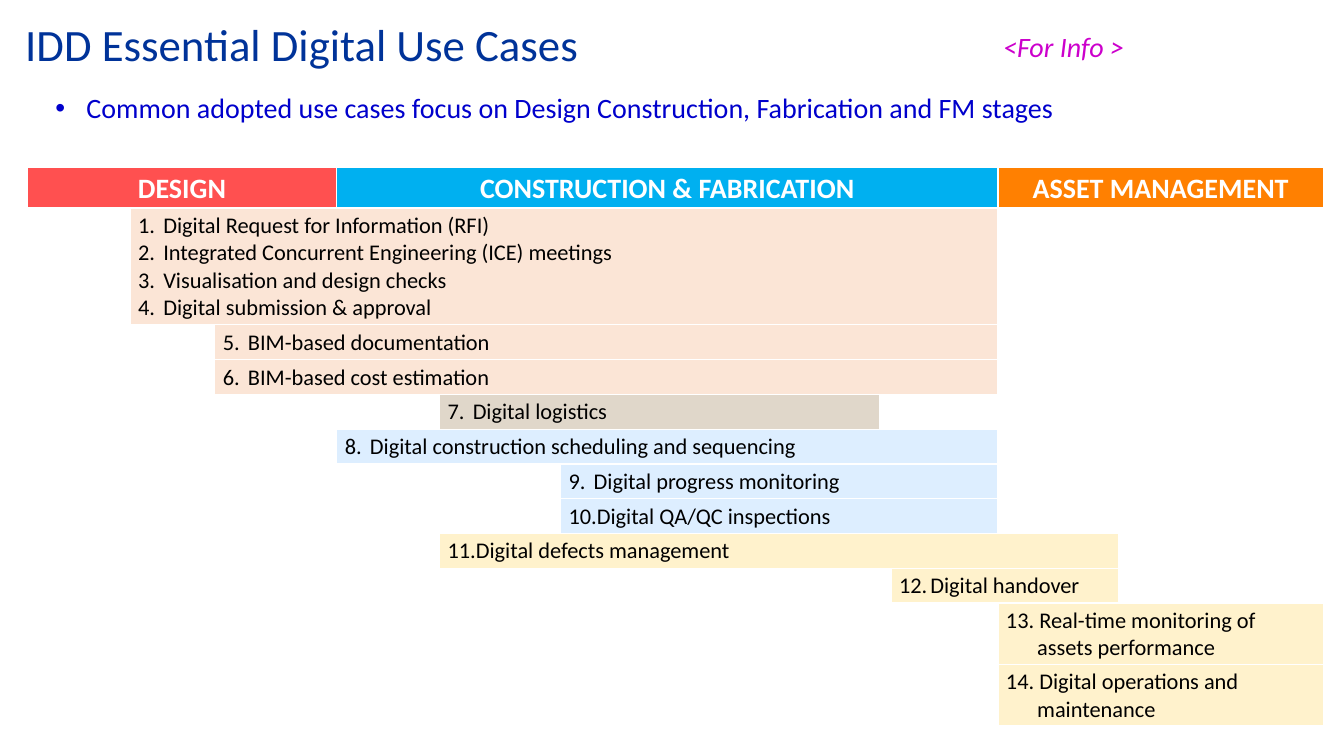
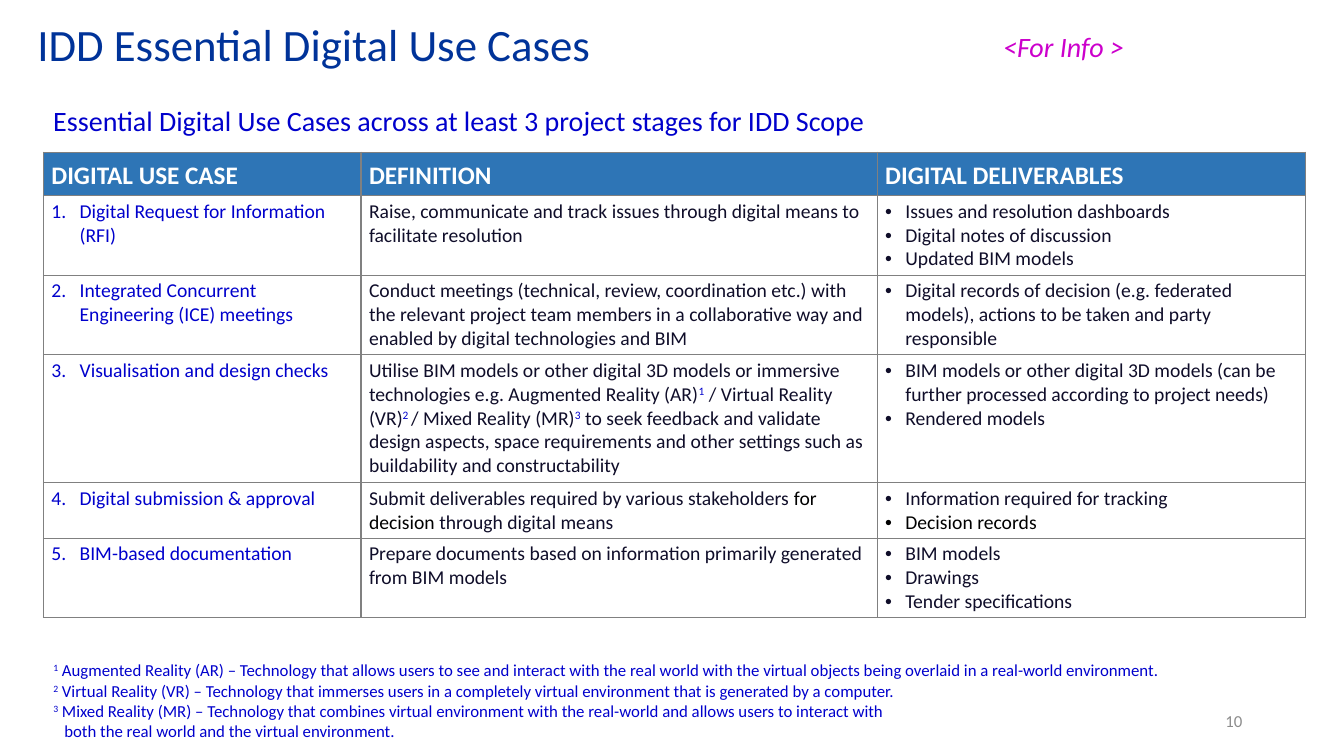
"""Build two slides on essential digital use cases."""
from lxml.etree import SubElement
from pptx import Presentation
from pptx.dml.color import RGBColor
from pptx.enum.text import MSO_ANCHOR, MSO_AUTO_SIZE, PP_ALIGN
from pptx.oxml import parse_xml
from pptx.oxml.ns import nsdecls, qn
from pptx.util import Inches, Pt

COLOURS = {
    "title": "003399", "blue": "0000CC", "info": "CC00CC", "number": "8C8C8C",
    "white": "FFFFFF", "black": "000000", "ink": "0F0D29", "grid": "808080",
    "design": "FF5050", "construction": "00B0F0", "asset": "FF8001",
    "peach": "FBE5D6", "taupe": "E0D7CA", "ice": "DDEEFF", "cream": "FFF2CC",
    "header": "2E75B6",
}
STYLES = {
    "title": {"size": Pt(32), "color": "title"},
    "lead": {"size": Pt(20), "color": "blue"},
    "info": {"size": Pt(20), "color": "info", "italic": True},
    "footnote": {"size": Pt(12), "color": "blue"},
    "number": {"size": Pt(12), "color": "number"},
    "stage": {"size": Pt(20), "color": "white", "bold": True},
    "use": {"size": Pt(16), "color": "black"},
    "header": {"size": Pt(18), "color": "white", "bold": True},
    "case": {"size": Pt(14), "color": "blue"},
    "body": {"size": Pt(14), "color": "ink"},
}
MARGINS = {"margin_left": Inches(0.08), "margin_right": Inches(0.08),
           "margin_top": Inches(0.04), "margin_bottom": Inches(0.03)}
BARE = dict.fromkeys(MARGINS, 0)


def assign(target, values):
    for name, value in values.items():
        setattr(target, name, value)


def rgb(colour):
    return RGBColor.from_string(COLOURS[colour])


class Deck:
    def __init__(self):
        self.presentation = Presentation()
        assign(self.presentation, {"slide_width": Inches(13.33), "slide_height": Inches(7.5)})
        self.slide = None

    def add_slide(self, heading, left, width):
        self.slide = self.presentation.slides.add_slide(self.presentation.slide_layouts[5])
        title = self.slide.shapes.title
        assign(title, {"left": Inches(left), "top": Inches(0.07),
                       "width": Inches(width), "height": Inches(0.79)})
        assign(title.text_frame, {"vertical_anchor": MSO_ANCHOR.MIDDLE, "word_wrap": True,
                                  "auto_size": MSO_AUTO_SIZE.NONE})
        self.paragraphs(title.text_frame, [heading], "title",
                        layout={"alignment": PP_ALIGN.LEFT, "line_spacing": 0.9})
        self.text(9.85, 0.24, 1.41, 0.44, ["<For Info >"], "info", wrap=False)

    def paragraphs(self, frame, contents, style, marker=None, start=1, indent=0, layout=None):
        for index, content in enumerate(contents):
            paragraph = frame.add_paragraph() if index else frame.paragraphs[0]
            assign(paragraph, layout or {})
            properties = paragraph._p.get_or_add_pPr()
            if indent:
                properties.set("marL", str(Inches(indent)))
                properties.set("indent", str(-Inches(indent)))
            if marker == "number":
                SubElement(properties, qn("a:buAutoNum"), type="arabicPeriod", startAt=str(start))
            elif marker:
                SubElement(properties, qn("a:buFont"), typeface="Arial")
                SubElement(properties, qn("a:buChar"), char=marker)
            for piece in [content] if isinstance(content, str) else content:
                self.run(paragraph, piece, style)

    def run(self, paragraph, piece, style):
        wording, changes = (piece, {}) if isinstance(piece, str) else piece
        values = {"name": "Calibri", **STYLES[style], **changes}
        run = paragraph.add_run()
        run.text = wording
        run.font.color.rgb = rgb(values.pop("color"))
        if values.pop("raised", False):
            run._r.get_or_add_rPr().set("baseline", "30000")
        assign(run.font, values)

    def text(self, left, top, width, height, contents, style, wrap=True, anchor=MSO_ANCHOR.TOP, **form):
        box = self.slide.shapes.add_textbox(Inches(left), Inches(top), Inches(width), Inches(height))
        assign(box.text_frame, {"word_wrap": wrap, "vertical_anchor": anchor})
        self.paragraphs(box.text_frame, contents, style, **form)
        return box.text_frame

    def table(self, left, top, widths, heights, border):
        frame = self.slide.shapes.add_table(
            len(heights), len(widths), Inches(left), Inches(top),
            Inches(sum(widths)), Inches(sum(heights)))
        table = frame.table
        assign(table, {"first_row": False, "horz_banding": False})
        for column, width in zip(table.columns, widths):
            column.width = Inches(width)
        for row, height in zip(table.rows, heights):
            row.height = Inches(height)
        for cell in table.iter_cells():
            assign(cell, BARE)
            cell.fill.background()
            for position, side in enumerate("LRTB"):
                cell._tc.tcPr.insert(position, parse_xml(
                    f'<a:ln{side} {nsdecls("a")} w="12700"><a:solidFill>'
                    f'<a:srgbClr val="{COLOURS[border]}"/></a:solidFill></a:ln{side}>'))
        return table

    def cell(self, table, row, column, contents, style, fill, span=1, **form):
        cell = table.cell(row, column)
        if span > 1:
            cell.merge(table.cell(row, column + span - 1))
        assign(cell, MARGINS)
        cell.fill.solid()
        cell.fill.fore_color.rgb = rgb(fill)
        self.paragraphs(cell.text_frame, contents, style, **form)


STAGES = [(0, 3, "DESIGN", "design"), (3, 8, "CONSTRUCTION & FABRICATION", "construction"),
          (11, 3, "ASSET MANAGEMENT", "asset")]
NUMBERED_USES = [
    (1, 10, "peach", 1, ["Digital Request for Information (RFI)",
                         "Integrated Concurrent Engineering (ICE) meetings",
                         "Visualisation and design checks",
                         "Digital submission & approval"]),
    (2, 9, "peach", 5, ["BIM-based documentation"]),
    (2, 9, "peach", 6, ["BIM-based cost estimation"]),
    (4, 5, "taupe", 7, ["Digital logistics"]),
    (3, 8, "ice", 8, ["Digital construction scheduling and sequencing"]),
    (6, 5, "ice", 9, ["Digital progress monitoring"]),
    (6, 5, "ice", 10, ["Digital QA/QC inspections"]),
    (4, 8, "cream", 11, ["Digital defects management"]),
]
LATE_USES = [(10, 2, "12.\tDigital handover"),
             (11, 3, "13. Real-time monitoring of assets performance"),
             (11, 3, "14. Digital operations and maintenance")]
RAISED = {"color": "blue", "raised": True}
BLACK = {"color": "black"}
HEADERS = ["DIGITAL USE CASE", "DEFINITION", "DIGITAL DELIVERABLES"]
DEFINITIONS = [
    ("Digital Request for Information (RFI)",
     "Raise, communicate and track issues through digital means to facilitate resolution",
     ["Issues and resolution dashboards", "Digital notes of discussion", "Updated BIM models"]),
    ("Integrated Concurrent Engineering (ICE) meetings",
     "Conduct meetings (technical, review, coordination etc.) with the relevant project team "
     "members in a collaborative way and enabled by digital technologies and BIM",
     ["Digital records of decision (e.g. federated models), actions to be taken and party responsible"]),
    ("Visualisation and design checks",
     ["Utilise BIM models or other digital 3D models or immersive technologies e.g. "
      "Augmented Reality (AR)", ("1", RAISED), " / Virtual Reality (VR)", ("2 ", RAISED),
      "/ Mixed Reality (MR)", ("3", RAISED),
      " to seek feedback and validate design aspects, space requirements and other settings "
      "such as buildability and constructability"],
     ["BIM models or other digital 3D models (can be further processed according to project needs)",
      "Rendered models"]),
    ("Digital submission & approval",
     ["Submit deliverables required by various stakeholders ", ("for decision ", BLACK),
      "through digital means"],
     ["Information required for tracking", [("Decision records", BLACK)]]),
    ("BIM-based documentation",
     "Prepare documents based on information primarily generated from BIM models",
     ["BIM models", "Drawings", "Tender specifications"]),
]
FOOTNOTES = [
    " Augmented Reality (AR) – Technology that allows users to see and interact with the real world "
    "with the virtual objects being overlaid in a real-world environment.",
    " Virtual Reality (VR) – Technology that immerses users in a completely virtual environment "
    "that is generated by a computer.",
    " Mixed Reality (MR) – Technology that combines virtual environment with the real-world "
    "and allows users to interact with",
]


def build_stages(deck):
    deck.add_slide("IDD Essential Digital Use Cases", 0.15, 12.87)
    deck.text(0.45, 0.85, 12.57, 0.44,
              ["Common adopted use cases focus on Design Construction, Fabrication and FM stages"],
              "lead", marker="•", indent=0.31)
    widths = [1.02, 0.84, 1.21, 1.02, 1.09, 0.11, 1.06, 1.09, 1.02, 0.11, 1.06, 1.2, 1.02, 1.01]
    header, block, double, singles = 0.4, 1.16, 0.61, 8
    single = (5.54 - header - block - 2 * double) / singles
    heights = [header, block] + [single] * singles + [double] * 2
    chart = deck.table(0.27, 1.66, widths, heights, "white")
    for column, span, stage, fill in STAGES:
        deck.cell(chart, 0, column, [stage], "stage", fill, span,
                  layout={"alignment": PP_ALIGN.CENTER})
    for row, (column, span, fill, start, uses) in enumerate(NUMBERED_USES, 1):
        deck.cell(chart, row, column, uses, "use", fill, span,
                  marker="number", start=start, indent=0.25)
    for row, (column, span, use) in enumerate(LATE_USES, 1 + len(NUMBERED_USES)):
        deck.cell(chart, row, column, [use], "use", "cream", span, indent=0.31)


def build_definitions(deck):
    deck.add_slide("IDD Essential Digital Use Cases", 0.27, 12.75)
    deck.text(9.42, 6.95, 3, 0.4, ["10"], "number", anchor=MSO_ANCHOR.MIDDLE,
              layout={"alignment": PP_ALIGN.RIGHT})
    deck.text(0.43, 0.98, 8.33, 0.44,
              ["Essential Digital Use Cases across at least 3 project stages for IDD Scope"],
              "lead", wrap=False)
    grid = deck.table(0.43, 1.51, [3.15, 5.12, 4.25], [0.43, 0.79, 0.79, 1.27, 0.55, 0.79], "grid")
    for column, header in enumerate(HEADERS):
        deck.cell(grid, 0, column, [header], "header", "header", layout={"line_spacing": 1.15})
    for row, (case, definition, deliverables) in enumerate(DEFINITIONS, 1):
        deck.cell(grid, row, 0, [case], "case", "white", marker="number", start=row, indent=0.28)
        deck.cell(grid, row, 1, [definition], "body", "white")
        deck.cell(grid, row, 2, deliverables, "body", "white", marker="•", indent=0.2)
    notes = [[(str(mark), RAISED), note] for mark, note in enumerate(FOOTNOTES, 1)]
    frame = deck.text(0.43, 6.5, 12.79, 0.91, notes, "footnote")
    continuation = frame.add_paragraph()
    continuation._p.get_or_add_pPr().set("marL", str(Inches(0.11)))
    deck.run(continuation, "both the real world and the virtual environment.", "footnote")


def main():
    deck = Deck()
    build_stages(deck)
    build_definitions(deck)
    deck.presentation.save("out.pptx")


if __name__ == "__main__":
    main()
